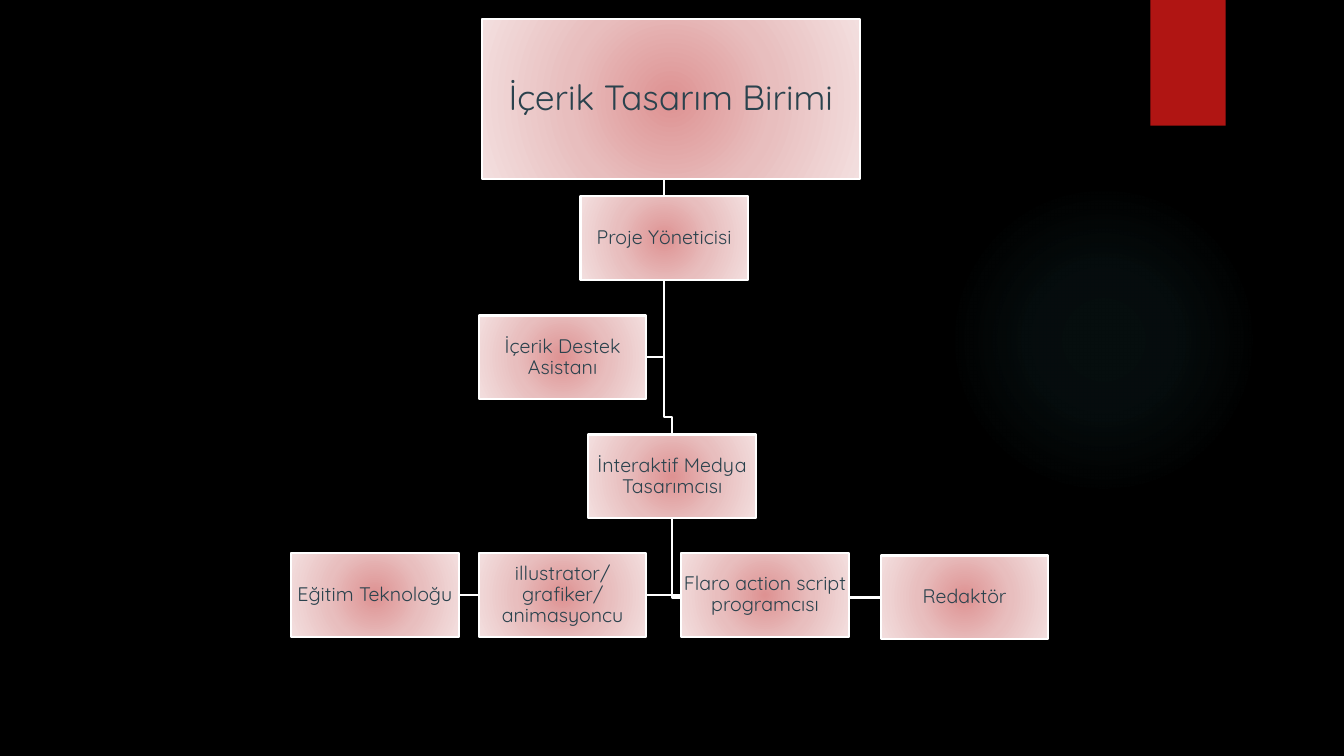
"""Org chart of a content design unit on a black slide."""
from lxml.etree import SubElement
from pptx import Presentation
from pptx.dml.color import RGBColor
from pptx.enum.shapes import MSO_SHAPE as SHAPE
from pptx.enum.text import MSO_ANCHOR as ANCHOR, PP_ALIGN as ALIGN
from pptx.oxml.ns import qn
from pptx.util import Cm, Pt

COLORS = {
    "back": "000000", "accent": "B01513", "glow": "50B9C1",
    "line": "FFFFFF", "text": "2A424D",
    "inner": "DE9292", "middle": "E8BEBE", "outer": "F3DFDF",
}
FONT = "Quicksand"
BOX_W, BOX_H, BEND = 4.22, 2.11, 0.43

UNIT = ("İçerik Tasarım Birimi", 12.14, 0.48, 9.53, 4.04, 25)
POSTS = {
    "manager": ("Proje Yöneticisi", 14.63, 4.95),
    "designer": ("İnteraktif Medya Tasarımcısı", 14.83, 10.95),
    "illustrator": ("illustrator/grafiker/animasyoncu", 12.07, 13.94),
    "programmer": ("Flaro action script programcısı", 17.17, 13.94),
    "technologist": ("Eğitim Teknoloğu", 7.34, 13.94),
    "editor": ("Redaktör", 22.2, 14.0),
    "assistant": ("İçerik Destek Asistanı", 12.07, 7.95),
}
BOXES = {"unit": UNIT}
BOXES.update({k: post + (BOX_W, BOX_H, 14) for k, post in POSTS.items()})

SIDE_LINKS = [
    ("manager", "assistant"), ("designer", "editor"),
    ("designer", "technologist"), ("designer", "programmer"),
    ("designer", "illustrator"),
]
DOWN_LINKS = [("manager", "designer"), ("unit", "manager")]
BOX_STOPS = [(0, "inner", 100), (50, "middle", 100), (100, "outer", 100)]
GLOW_STOPS = [(0, "glow", 7), (36, "glow", 6), (69, "glow", 0), (100, "glow", 0)]


def rgb(name):
    return RGBColor.from_string(COLORS[name])


def add_shape(s, kind, left, top, width, height):
    sp = s.shapes.add_shape(kind, Cm(left), Cm(top), Cm(width), Cm(height))
    sp.shadow.inherit = False
    sp.line.fill.background()
    return sp


def outline(sp):
    sp.line.color.rgb = rgb("line")
    sp.line.width = Pt(1.5)


def radial_fill(sp, stops):
    sp.fill.gradient()
    grad = sp._element.spPr.find(qn("a:gradFill"))
    for child in list(grad):
        grad.remove(child)
    gs_list = SubElement(grad, qn("a:gsLst"))
    for pos, name, alpha in stops:
        gs = SubElement(gs_list, qn("a:gs"), pos=str(pos * 1000))
        color = SubElement(gs, qn("a:srgbClr"), val=COLORS[name])
        if alpha < 100:
            SubElement(color, qn("a:alpha"), val=str(alpha * 1000))
    route = SubElement(grad, qn("a:path"), {"path": "circle"})
    SubElement(route, qn("a:fillToRect"), l="50000", t="50000", r="50000", b="50000")


def add_box(s, text, left, top, width, height, size):
    sp = add_shape(s, SHAPE.RECTANGLE, left, top, width, height)
    radial_fill(sp, BOX_STOPS)
    outline(sp)
    tf = sp.text_frame
    tf.word_wrap = True
    tf.vertical_anchor = ANCHOR.MIDDLE
    tf.margin_left = tf.margin_right = tf.margin_top = tf.margin_bottom = Cm(0.03)
    p = tf.paragraphs[0]
    p.alignment = ALIGN.CENTER
    p.line_spacing = 0.9
    r = p.add_run()
    r.text = text
    r.font.size = Pt(size)
    r.font.name = FONT
    r.font.color.rgb = rgb("text")


def add_polyline(s, points):
    points = [(Cm(x), Cm(y)) for x, y in points]
    builder = s.shapes.build_freeform(*points[0])
    builder.add_line_segments(points[1:], close=False)
    sp = builder.convert_to_shape()
    sp.shadow.inherit = False
    sp.fill.background()
    outline(sp)


def bottom_middle(name):
    _, left, top, width, height, _ = BOXES[name]
    return left + width / 2, top + height


def side_link(s, parent, child):
    x, y = bottom_middle(parent)
    _, left, top, width, height, _ = BOXES[child]
    end_x = left if left > x else left + width
    mid_y = top + height / 2
    add_polyline(s, [(x, y), (x, mid_y), (end_x, mid_y)])


def down_link(s, parent, child):
    x, y = bottom_middle(parent)
    end_x, top = bottom_middle(child)[0], BOXES[child][2]
    bend_y = top - BEND
    add_polyline(s, [(x, y), (x, bend_y), (end_x, bend_y), (end_x, top)])


def main():
    prs = Presentation()
    prs.slide_width, prs.slide_height = Cm(33.87), Cm(19.05)
    s = prs.slides.add_slide(prs.slide_layouts[6])
    s.background.fill.solid()
    s.background.fill.fore_color.rgb = rgb("back")
    radial_fill(add_shape(s, SHAPE.OVAL, 23.9, 4.65, 7.82, 7.82), GLOW_STOPS)
    tab = add_shape(s, SHAPE.RECTANGLE, 28.99, 0, 1.9, 3.17)
    tab.fill.solid()
    tab.fill.fore_color.rgb = rgb("accent")
    for parent, child in SIDE_LINKS:
        side_link(s, parent, child)
    for parent, child in DOWN_LINKS:
        down_link(s, parent, child)
    for box in BOXES.values():
        add_box(s, *box)
    prs.save("out.pptx")


if __name__ == "__main__":
    main()
